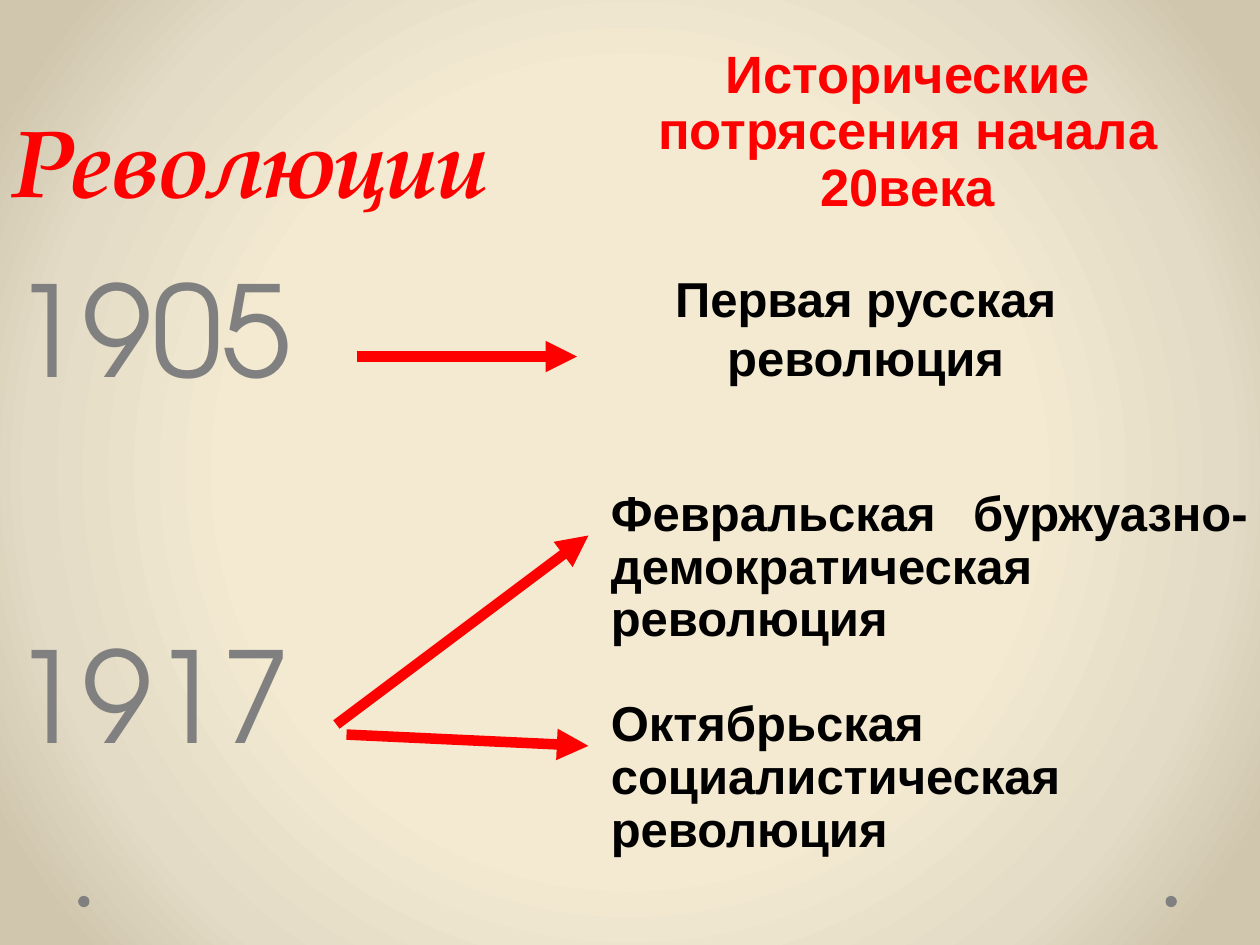
from lxml import etree
from pptx import Presentation
from pptx.dml.color import RGBColor
from pptx.enum.shapes import MSO_CONNECTOR, MSO_SHAPE
from pptx.enum.text import MSO_ANCHOR, PP_ALIGN
from pptx.oxml.ns import qn
from pptx.util import Inches, Pt

COLORS = {
    "red": "FF0000",
    "gray": "808080",
    "black": "000000",
    "cream": "F3EAD1",
    "sand": "E3DBC5",
    "stone": "CFC6AD",
}


def color(name):
    return RGBColor.from_string(COLORS[name])


def paint_background(page):
    page.background.fill.gradient()
    gradient = page.element.xpath(".//p:bgPr/a:gradFill")[0]
    for child in list(gradient):
        gradient.remove(child)
    stops = etree.SubElement(gradient, qn("a:gsLst"))
    for position, name in ((50, "cream"), (76, "sand"), (92, "stone")):
        stop = etree.SubElement(stops, qn("a:gs"), pos=str(position * 1000))
        etree.SubElement(stop, qn("a:srgbClr"), val=COLORS[name])
    shade = etree.SubElement(gradient, qn("a:path"), path="circle")
    sides = {side: "50000" for side in "ltrb"}
    etree.SubElement(shade, qn("a:fillToRect"), **sides)


def add_text(page, area, text, size, font="Arial", name="black", bold=True,
             italic=False, align=PP_ALIGN.LEFT, spacing=1.0,
             anchor=MSO_ANCHOR.TOP, margin=0.1):
    box = page.shapes.add_textbox(*map(Inches, area))
    frame = box.text_frame
    frame.word_wrap = True
    frame.vertical_anchor = anchor
    frame.margin_left = frame.margin_right = Inches(margin)
    para = frame.paragraphs[0]
    para.alignment = align
    para.line_spacing = spacing
    span = para.add_run()
    span.text = text
    span.font.name = font
    span.font.size = Pt(size)
    span.font.bold = bold
    span.font.italic = italic
    span.font.color.rgb = color(name)


def add_arrow(page, start, end):
    arrow = page.shapes.add_connector(
        MSO_CONNECTOR.STRAIGHT, *map(Inches, start + end))
    arrow.line.color.rgb = color("red")
    arrow.line.width = Pt(6)
    etree.SubElement(arrow.line._get_or_add_ln(), qn("a:tailEnd"), type="triangle")
    etree.SubElement(arrow._element.spPr, qn("a:effectLst"))


def add_header(page, title_area, subtitle_area):
    add_text(page, title_area, "Революции", 54, font="TeX Gyre Pagella",
             name="red", italic=True, spacing=Pt(58), anchor=MSO_ANCHOR.BOTTOM)
    add_text(page, subtitle_area, "Исторические потрясения начала 20века", 30,
             name="red", align=PP_ALIGN.CENTER, spacing=0.9, margin=0.2)


def add_year(page, area, year, arrows):
    add_text(page, area, year, 72, font="TeX Gyre Adventor", name="gray", bold=False)
    for start, end in arrows:
        add_arrow(page, start, end)


def add_events(page):
    add_text(page, (4.58, 2.08, 4.58, 1.04), "Первая русская революция", 28,
             align=PP_ALIGN.CENTER)
    add_text(page, (4.75, 3.83, 5.25, 1.5),
             "Февральская буржуазно-демократическая революция", 28,
             align=PP_ALIGN.JUSTIFY, spacing=0.9)
    add_text(page, (4.75, 5.5, 5.25, 1.37),
             "Октябрьская социалистическая революция", 28, spacing=0.9)


def add_corner_dots(page, lefts, top, size):
    for left in lefts:
        dot = page.shapes.add_shape(
            MSO_SHAPE.OVAL, *map(Inches, (left, top, size, size)))
        dot.shadow.inherit = False
        dot.fill.solid()
        dot.fill.fore_color.rgb = color("gray")
        dot.line.fill.background()


def main():
    deck = Presentation()
    deck.slide_width, deck.slide_height = Inches(10), Inches(7.5)
    page = deck.slides.add_slide(deck.slide_layouts[6])
    paint_background(page)
    add_corner_dots(page, (0.62, 9.25), 7.11, 0.09)
    add_header(page, (0, 0.5, 9.19, 1.27), (4.41, 0.33, 5.59, 1.67))
    add_year(page, (0, 1.95, 3.29, 1.4), "1905", [((2.83, 2.83), (4.58, 2.83))])
    add_year(page, (0, 4.85, 3.29, 1.4), "1917",
             [((2.67, 5.75), (4.67, 4.25)), ((2.75, 5.83), (4.67, 5.92))])
    add_events(page)
    deck.save("out.pptx")


if __name__ == "__main__":
    main()
